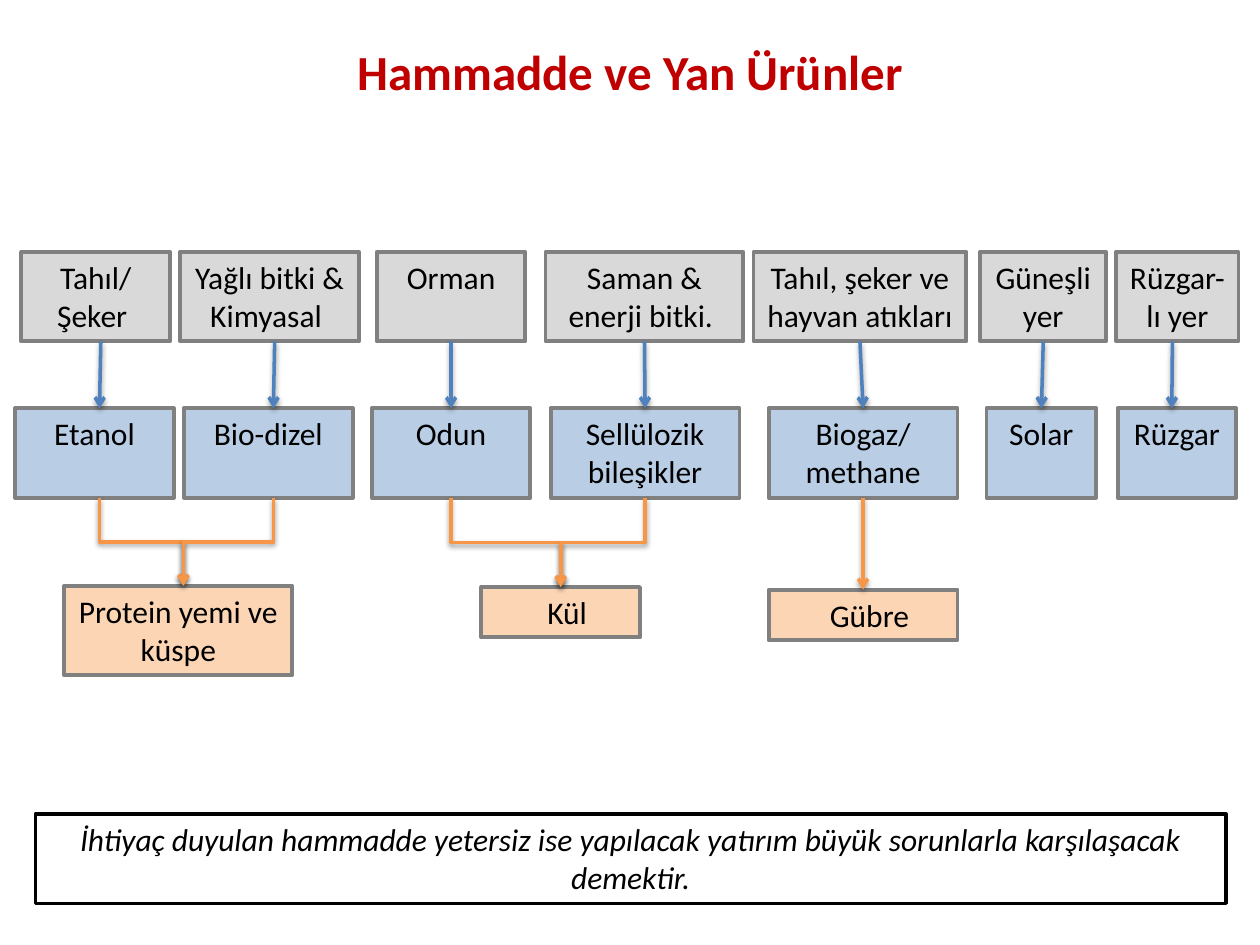
from dataclasses import dataclass

from lxml.etree import SubElement
from pptx import Presentation
from pptx.dml.color import RGBColor
from pptx.enum.shapes import MSO_CONNECTOR, MSO_SHAPE
from pptx.enum.text import MSO_ANCHOR, MSO_AUTO_SIZE, PP_ALIGN
from pptx.oxml import parse_xml
from pptx.oxml.ns import qn
from pptx.util import Inches, Pt


@dataclass(frozen=True)
class Theme:
    font: str = "Calibri"
    head: int = 28
    body: int = 18
    edge: float = 2.25
    wire: float = 2
    red: str = "C00000"
    black: str = "000000"
    white: str = "FFFFFF"
    gray: str = "D9D9D9"
    rim: str = "808080"
    pale: str = "B9CDE5"
    peach: str = "FCD5B5"
    blue: str = "4F81BD"
    orange: str = "F79646"


THEME = Theme()
TALL, SHORT = 0.71, 0.4
SHADOW = (
    '<a:effectLst xmlns:a="http://schemas.openxmlformats.org/drawingml/2006/main">'
    '<a:outerShdw blurRad="39400" dist="20300" dir="5400000" rotWithShape="0">'
    '<a:srgbClr val="000000"><a:alpha val="38000"/></a:srgbClr>'
    "</a:outerShdw></a:effectLst>"
)

COLUMNS = [
    ("Tahıl/\nŞeker ", 0.17, 1.18, "Etanol", 0.12, 1.26, 0.04),
    ("Yağlı bitki & Kimyasal ", 1.43, 1.42, "Bio-dizel", 1.46, 1.34, 0.04),
    ("Orman", 2.99, 1.18, "Odun", 2.95, 1.26, 0),
    ("Saman & enerji bitki. ", 4.33, 1.57, "Sellülozik bileşikler", 4.37, 1.5, 0),
    ("Tahıl, şeker ve hayvan atıkları", 5.98, 1.69, "Biogaz/\nmethane", 6.1, 1.5, 0),
    ("Güneşli yer", 7.78, 1, "Solar", 7.83, 0.87, 0),
    ("Rüzgar-lı yer", 8.86, 0.97, "Rüzgar", 8.87, 0.94, -0.04),
]
OUTPUTS = [
    ("Protein yemi ve küspe", 0.51, 2.65, 1.81, TALL, 0.1, 0.04, (0, 1)),
    ("Kül", 3.82, 2.66, 1.26, SHORT, 0.2, 0, (2, 3)),
    ("Gübre", 6.1, 2.68, 1.5, SHORT, 0.2, 0, (4,)),
]


def apply(obj, values):
    for name, value in values.items():
        setattr(obj, name, value)


def rgb(color):
    return RGBColor.from_string(color)


def write(shape, text, size, color, anchor, inset=0.1, **extra):
    frame = shape.text_frame
    frame.text = text
    apply(frame, {
        "word_wrap": True, "auto_size": MSO_AUTO_SIZE.NONE,
        "vertical_anchor": anchor, "margin_left": Inches(inset),
        "margin_right": Inches(0.1), "margin_top": Inches(0.05),
        "margin_bottom": Inches(0.05),
    })
    for para in frame.paragraphs:
        para.alignment = PP_ALIGN.CENTER
        for run in para.runs:
            apply(run.font, {"name": THEME.font, "size": Pt(size), **extra})
            run.font.color.rgb = rgb(color)


def block(slide, box, text, fill, rim, edge, **extra):
    shape = slide.shapes.add_shape(MSO_SHAPE.RECTANGLE, *map(Inches, box))
    shape.shadow.inherit = False
    shape.fill.solid()
    shape.fill.fore_color.rgb = rgb(fill)
    shape.line.color.rgb = rgb(rim)
    shape.line.width = Pt(edge)
    write(shape, text, THEME.body, THEME.black, MSO_ANCHOR.TOP, **extra)


def arrow(slide, start, end, color, bent=False):
    kind = MSO_CONNECTOR.ELBOW if bent else MSO_CONNECTOR.STRAIGHT
    line = slide.shapes.add_connector(kind, *map(Inches, start + end))
    if bent:
        wide, high = abs(end[0] - start[0]), end[1] - start[1]
        mid_x, mid_y = (start[0] + end[0]) / 2, (start[1] + end[1]) / 2
        apply(line, {
            "left": Inches(mid_x - high / 2), "top": Inches(mid_y - wide / 2),
            "width": Inches(high), "height": Inches(wide),
        })
        right = end[0] > start[0]
        frame = line.element.spPr.find(qn("a:xfrm"))
        frame.set("rot", "16200000" if right else "5400000")
        frame.set("flipH", "1" if right else "0")
    line.line.color.rgb = rgb(color)
    line.line.width = Pt(THEME.wire)
    props = line.element.spPr
    SubElement(props.find(qn("a:ln")), qn("a:tailEnd"), type="arrow")
    props.append(parse_xml(SHADOW))


def title(slide, left, top, width, height):
    box = slide.shapes.add_textbox(*map(Inches, (left, top, width, height)))
    write(box, "Hammadde ve Yan Ürünler", THEME.head, THEME.red,
          MSO_ANCHOR.MIDDLE, bold=True)


def flow(slide, left, top):
    low = top + 1.24
    ports = []
    for feed, x, wide, fuel, low_x, low_w, nudge in COLUMNS:
        block(slide, (left + x, top, wide, TALL), feed,
              THEME.gray, THEME.rim, THEME.edge)
        block(slide, (left + low_x, low, low_w, TALL), fuel,
              THEME.pale, THEME.rim, THEME.edge)
        port = left + low_x + low_w / 2 + nudge
        ports.append(port)
        arrow(slide, (left + x + wide / 2 + nudge, top + TALL),
              (port, low), THEME.blue)
    for text, x, y, wide, high, inset, nudge, feeds in OUTPUTS:
        block(slide, (left + x, top + y, wide, high), text,
              THEME.peach, THEME.rim, THEME.edge, inset=inset)
        goal = (left + x + wide / 2 + nudge, top + y)
        for feed in feeds:
            arrow(slide, (ports[feed], low + TALL), goal,
                  THEME.orange, len(feeds) > 1)


def note(slide, left, top, width, height):
    block(slide, (left, top, width, height),
          "İhtiyaç duyulan hammadde yetersiz ise yapılacak yatırım "
          "büyük sorunlarla karşılaşacak demektir.",
          THEME.white, THEME.black, THEME.wire, italic=True)


def main():
    deck = Presentation()
    apply(deck, {"slide_width": Inches(10), "slide_height": Inches(7.5)})
    slide = deck.slides.add_slide(deck.slide_layouts[6])
    title(slide, 0.5, 0.29, 9, 0.55)
    flow(slide, 0, 2)
    note(slide, 0.28, 6.46, 9.45, TALL)
    deck.save("out.pptx")


if __name__ == "__main__":
    main()
